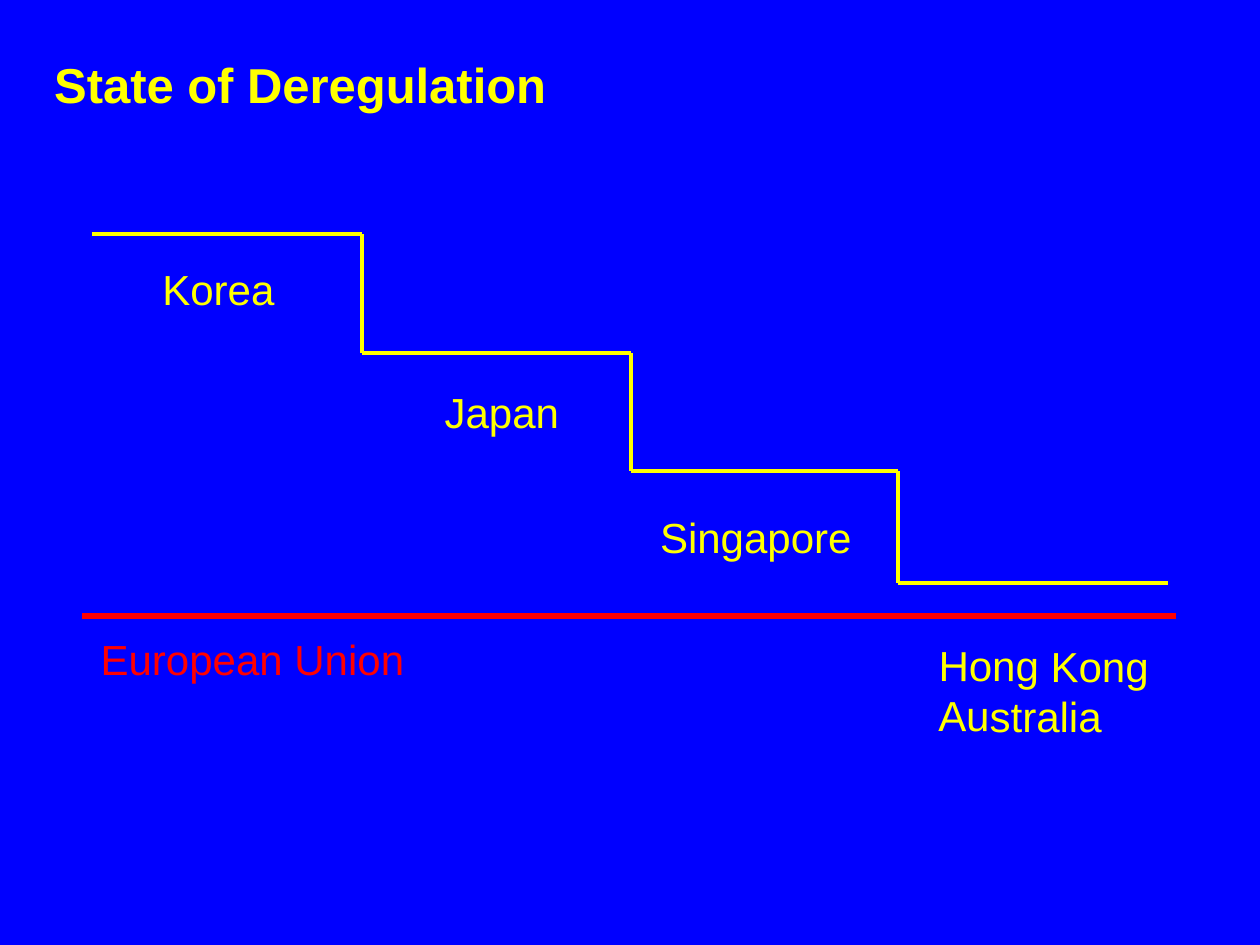
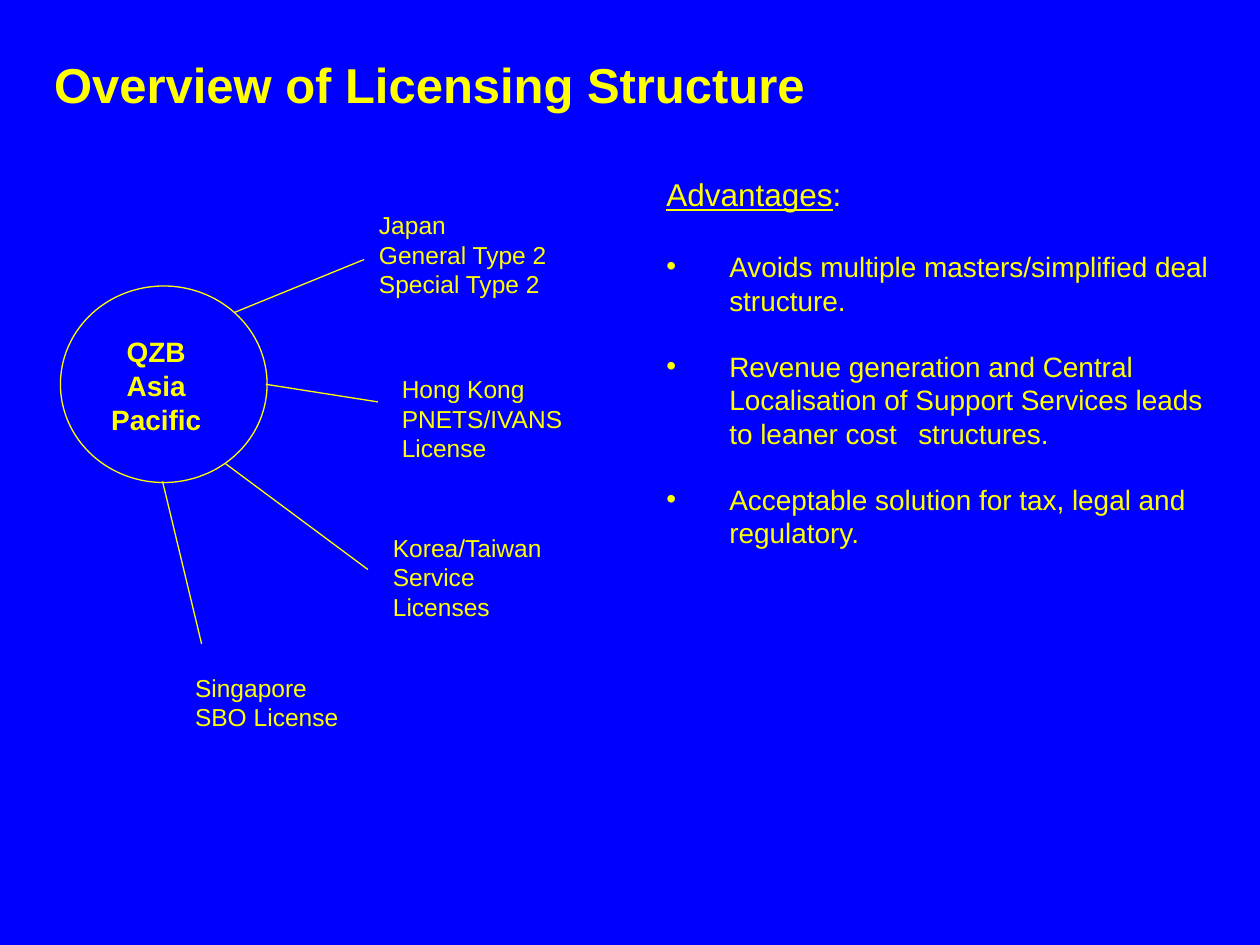
from dataclasses import dataclass
from itertools import pairwise

from lxml import etree
from pptx import Presentation
from pptx import util as u
from pptx.dml.color import RGBColor
from pptx.enum import shapes, text
from pptx.oxml.ns import qn


@dataclass(frozen=True)
class Theme:
    font: str = "Arial"
    background: RGBColor = RGBColor(0x00, 0x00, 0xFF)
    main: RGBColor = RGBColor(0xFF, 0xFF, 0x00)
    accent: RGBColor = RGBColor(0xFF, 0x00, 0x00)
    title_size: float = 28
    step_size: float = 24
    heading_size: float = 18
    body_size: float = 16
    label_size: float = 14
    thin: float = 0.75
    medium: float = 2.25
    thick: float = 3


class Deck:
    def __init__(self, theme):
        self.theme = theme
        self.presentation = Presentation()
        self.presentation.slide_width = u.Inches(10)
        self.presentation.slide_height = u.Inches(7.5)
        fill = self.presentation.slide_master.background.fill
        fill.solid()
        fill.fore_color.rgb = theme.background
        self.slide = None

    def format_runs(self, paragraph, size, color=None, bold=False):
        for run in paragraph.runs:
            run.font.name = self.theme.font
            run.font.size = u.Pt(size)
            run.font.bold = bold
            run.font.color.rgb = color or self.theme.main

    def add_slide(self, title):
        layout = self.presentation.slide_layouts.get_by_name("Title Only")
        self.slide = self.presentation.slides.add_slide(layout)
        shape = self.slide.shapes.title
        shape.left, shape.top = u.Inches(0.33), u.Inches(0.33)
        shape.width, shape.height = u.Inches(9.33), u.Inches(0.67)
        frame = shape.text_frame
        frame.text = title
        frame.vertical_anchor = text.MSO_ANCHOR.MIDDLE
        paragraph = frame.paragraphs[0]
        paragraph.alignment = text.PP_ALIGN.LEFT
        self.format_runs(paragraph, self.theme.title_size, bold=True)

    def add_text(self, content, left, top, width, height, size, color=None,
                 bold=False, align=text.PP_ALIGN.LEFT, wrap=False):
        shape = self.slide.shapes.add_textbox(
            u.Inches(left), u.Inches(top), u.Inches(width), u.Inches(height))
        frame = shape.text_frame
        frame.word_wrap = wrap
        frame.auto_size = text.MSO_AUTO_SIZE.SHAPE_TO_FIT_TEXT
        frame.text = content
        for paragraph in frame.paragraphs:
            paragraph.alignment = align
            self.format_runs(paragraph, size, color, bold)
        return shape

    def add_line(self, start, end, width, color=None):
        connector = self.slide.shapes.add_connector(
            shapes.MSO_CONNECTOR.STRAIGHT,
            *(u.Inches(value) for value in (*start, *end)))
        connector.line.color.rgb = color or self.theme.main
        connector.line.width = u.Pt(width)
        etree.SubElement(connector._element.spPr, qn("a:effectLst"))

    def add_ellipse(self, left, top, width, height):
        shape = self.slide.shapes.add_shape(
            shapes.MSO_SHAPE.OVAL, u.Inches(left), u.Inches(top),
            u.Inches(width), u.Inches(height))
        shape.shadow.inherit = False
        shape.fill.background()
        shape.line.color.rgb = self.theme.main
        shape.line.width = u.Pt(self.theme.thin)

    def add_bullet_list(self, heading, items, left, top, width, height):
        """Place an underlined heading with a colon above bulleted items."""
        theme = self.theme
        shape = self.add_text(heading, left, top, width, height,
                              theme.heading_size, wrap=True)
        frame = shape.text_frame
        paragraph = frame.paragraphs[0]
        paragraph.runs[0].font.underline = True
        paragraph.add_run().text = ":"
        self.format_runs(paragraph, theme.heading_size)
        paragraph.space_after = u.Pt(2.5)
        for item in items:
            paragraph = frame.add_paragraph()
            paragraph.text = item
            paragraph.space_before = u.Pt(18.5)
            self.format_runs(paragraph, theme.body_size)
            properties = paragraph._p.get_or_add_pPr()
            properties.set("marL", str(u.Inches(0.5)))
            properties.set("indent", str(u.Inches(-0.5)))
            etree.SubElement(properties, qn("a:buFont"), typeface=theme.font)
            etree.SubElement(properties, qn("a:buChar"), char="•")


def build_deregulation(deck):
    theme = deck.theme
    deck.add_slide("State of Deregulation")

    edges = [0.73, 2.87, 5.01, 7.13, 9.27]
    levels = [1.86, 2.8, 3.74, 4.63]
    for (left, right), level in zip(pairwise(edges), levels):
        deck.add_line((left, level), (right, level), theme.medium)
    for edge, (upper, lower) in zip(edges[1:], pairwise(levels)):
        deck.add_line((edge, upper), (edge, lower), theme.medium)

    for name, left, top, width in [("Korea", 1.19, 2.04, 1.09),
                                   ("Japan", 3.43, 3.02, 1.11),
                                   ("Singapore", 5.14, 4.01, 1.72)]:
        deck.add_text(name, left, top, width, 0.5, theme.step_size)
    lowest = deck.add_text("Hong Kong\nAustralia", 7.35, 5.03, 1.87, 0.9,
                           theme.step_size)
    lowest.rotation = 0.3

    deck.add_line((0.65, 4.89), (9.33, 4.89), theme.thick, theme.accent)
    deck.add_text("European Union", 0.7, 4.98, 2.61, 0.5, theme.step_size,
                  theme.accent)


def build_licensing(deck):
    theme = deck.theme
    deck.add_slide("Overview of Licensing Structure")

    deck.add_ellipse(0.48, 2.27, 1.64, 1.56)
    deck.add_text("QZB\nAsia Pacific", 0.52, 2.61, 1.44, 0.64,
                  theme.body_size, bold=True, align=text.PP_ALIGN.CENTER)

    licenses = [
        ("Japan\nGeneral Type 2\nSpecial Type 2",
         (2.91, 1.62, 1.54, 0.8), (1.86, 2.48), (2.89, 2.06)),
        ("Hong Kong\nPNETS/IVANS\nLicense",
         (3.09, 2.92, 1.49, 0.8), (2.11, 3.05), (3, 3.19)),
        ("Korea/Taiwan\nService Licenses",
         (3.02, 4.18, 1.67, 0.57), (1.79, 3.68), (2.92, 4.52)),
        ("Singapore\nSBO License",
         (1.45, 5.29, 1.34, 0.57), (1.29, 3.82), (1.6, 5.11)),
    ]
    for label, box, start, end in licenses:
        deck.add_line(start, end, theme.thin)
        deck.add_text(label, *box, theme.label_size)

    deck.add_bullet_list("Advantages", [
        "Avoids multiple masters/simplified deal structure.",
        "Revenue generation and Central Localisation of Support Services "
        "leads to leaner cost \tstructures.",
        "Acceptable solution for tax, legal and regulatory.",
    ], 5.19, 1.34, 4.56, 3.1)


def main():
    deck = Deck(Theme())
    build_deregulation(deck)
    build_licensing(deck)
    deck.presentation.save("out.pptx")


if __name__ == "__main__":
    main()
